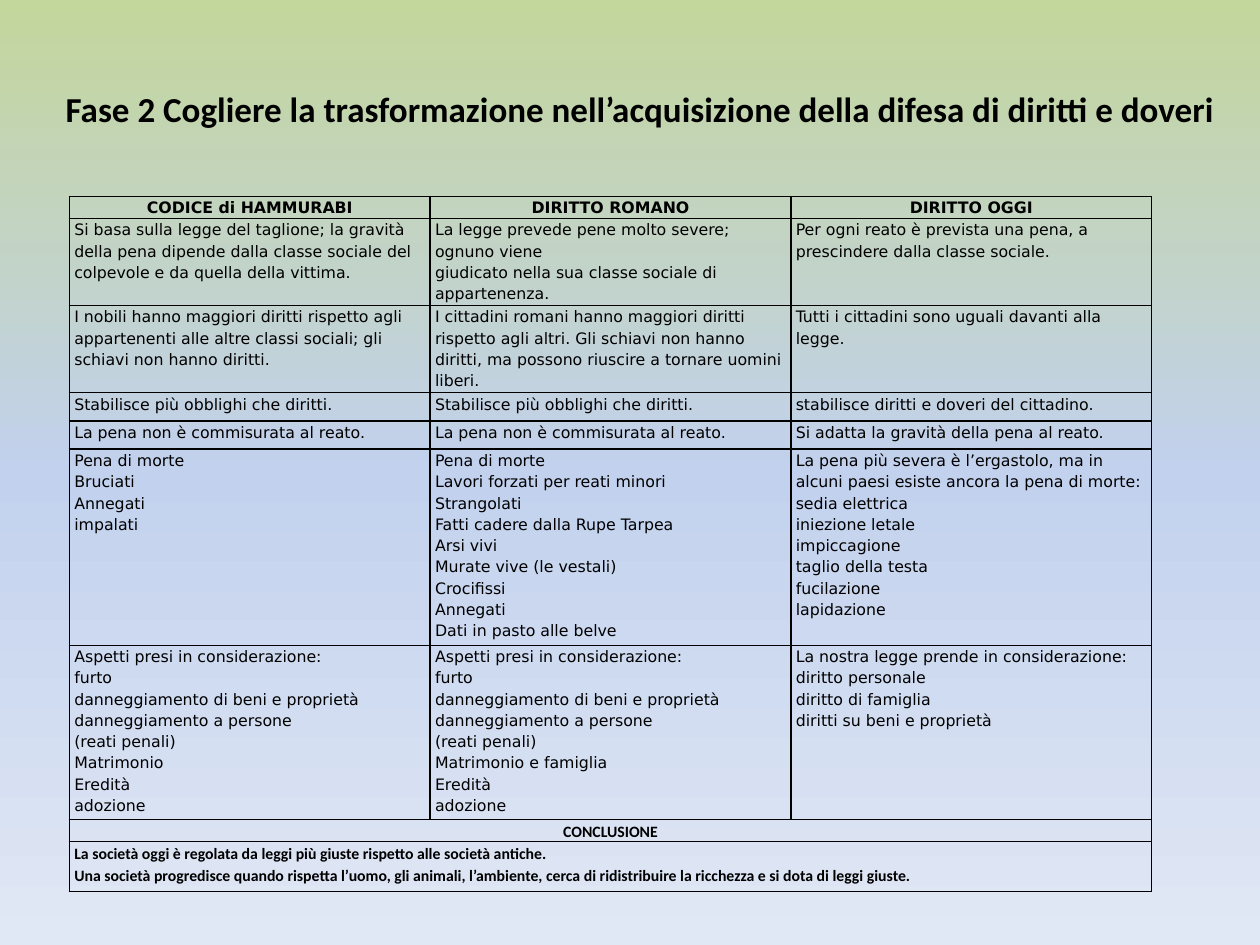
import copy
from dataclasses import dataclass

import pptx
import pptx.dml.color
import pptx.enum.dml
import pptx.enum.text
import pptx.oxml
import pptx.oxml.ns
import pptx.util

SLIDE_WIDTH = pptx.util.Inches(10)
SLIDE_HEIGHT = pptx.util.Inches(7.5)
BLACK = "000000"
GRADIENT = [(0, "C3D69B"), (0.5, "C2D1ED"), (1, "E1E8F5")]
LINE_HEIGHT = 12.15  # points taken by one line of table text
COLUMNS = 3
CENTER = pptx.enum.text.PP_ALIGN.CENTER
LEFT = pptx.enum.text.PP_ALIGN.LEFT


@dataclass
class TextStyle:
    font: str
    size: float
    bold: bool = False
    alignment: pptx.enum.text.PP_ALIGN = LEFT
    line_spacing: float = 1.15


@dataclass
class Row:
    lines: float  # height in lines of text
    cells: list[str]  # a single cell spans all columns
    style: TextStyle


TITLE = TextStyle("Calibri", 20, True, CENTER, 1)
HEADER = TextStyle("DejaVu Sans", 9, True, CENTER)
BODY = TextStyle("DejaVu Sans", 9)
CONCLUSION_HEADER = TextStyle("Calibri", 9, True, CENTER)
CONCLUSION = TextStyle("Calibri", 9, True)


def considered_aspects(family: str) -> str:
    return (
        "Aspetti presi in considerazione:\nfurto\ndanneggiamento di beni e proprietà\n"
        f"danneggiamento a persone\n(reati penali)\n{family}\nEredità\nadozione"
    )


ROWS = [
    Row(1, ["CODICE di HAMMURABI", "DIRITTO ROMANO", "DIRITTO OGGI"], HEADER),
    Row(4, [
        "Si basa sulla legge del taglione; la gravità della pena dipende dalla classe "
        "sociale del colpevole e da quella della vittima.",
        "La legge prevede pene molto severe; ognuno viene\n"
        "giudicato nella sua classe sociale di appartenenza.",
        "Per ogni reato è prevista una pena, a prescindere dalla classe sociale.",
    ], BODY),
    Row(4, [
        "I nobili hanno maggiori diritti rispetto agli appartenenti alle altre classi "
        "sociali; gli schiavi non hanno diritti.",
        "I cittadini romani hanno maggiori diritti rispetto agli altri. Gli schiavi non "
        "hanno diritti, ma possono riuscire a tornare uomini liberi.",
        "Tutti i cittadini sono uguali davanti alla legge.",
    ], BODY),
    Row(1.33, ["Stabilisce più obblighi che diritti."] * 2
        + ["stabilisce diritti e doveri del cittadino."], BODY),
    Row(1.33, ["La pena non è commisurata al reato."] * 2
        + ["Si adatta la gravità della pena al reato."], BODY),
    Row(9, [
        "Pena di morte\nBruciati\nAnnegati\nimpalati",
        "Pena di morte\nLavori forzati per reati minori\nStrangolati\n"
        "Fatti cadere dalla Rupe Tarpea\nArsi vivi\nMurate vive (le vestali)\n"
        "Crocifissi\nAnnegati\nDati in pasto alle belve",
        "La pena più severa è l’ergastolo, ma in alcuni paesi esiste ancora la pena di "
        "morte:\nsedia elettrica\niniezione letale\nimpiccagione\ntaglio della testa\n"
        "fucilazione\nlapidazione",
    ], BODY),
    Row(8, [
        considered_aspects("Matrimonio"),
        considered_aspects("Matrimonio e famiglia"),
        "La nostra legge prende in considerazione:\ndiritto personale\n"
        "diritto di famiglia\ndiritti su beni e proprietà",
    ], BODY),
    Row(1, ["CONCLUSIONE"], CONCLUSION_HEADER),
    Row(2.35, [
        "La società oggi è regolata da leggi più giuste rispetto alle società antiche.\n"
        "Una società progredisce quando rispetta l’uomo, gli animali, l’ambiente, cerca "
        "di ridistribuire la ricchezza e si dota di leggi giuste.",
    ], CONCLUSION),
]


def color(value: str) -> pptx.dml.color.RGBColor:
    return pptx.dml.color.RGBColor.from_string(value)


def set_attributes(target, values: dict) -> None:
    for name, value in values.items():
        setattr(target, name, value)


def write_text(text_frame, text: str, style: TextStyle) -> None:
    text_frame.text = text
    for paragraph in text_frame.paragraphs:
        set_attributes(paragraph, {
            "alignment": style.alignment, "line_spacing": style.line_spacing,
        })
        for run in paragraph.runs:
            set_attributes(run.font, {
                "name": style.font, "size": pptx.util.Pt(style.size), "bold": style.bold,
            })
            run.font.color.rgb = color(BLACK)


def paint_background(slide) -> None:
    fill = slide.background.fill
    fill.gradient()
    fill.gradient_angle = 270
    stop_list = slide.element.find(".//" + pptx.oxml.ns.qn("a:gsLst"))
    stop_list.append(copy.deepcopy(stop_list[0]))
    for stop, (position, value) in zip(fill.gradient_stops, GRADIENT):
        stop.position = position
        stop.color.rgb = color(value)


def add_title(slide, text: str) -> None:
    shape = slide.shapes.add_textbox(
        int(0.023 * SLIDE_WIDTH), int(0.03 * SLIDE_HEIGHT),
        int(0.97 * SLIDE_WIDTH), int(0.17 * SLIDE_HEIGHT),
    )
    set_attributes(shape.text_frame, {
        "word_wrap": True, "vertical_anchor": pptx.enum.text.MSO_ANCHOR.MIDDLE,
    })
    write_text(shape.text_frame, text, TITLE)


def format_cell(cell) -> None:
    set_attributes(cell, {
        "margin_left": pptx.util.Inches(0.04), "margin_right": pptx.util.Inches(0.04),
        "margin_top": 0, "margin_bottom": 0,
    })
    cell.fill.background()
    properties = cell._tc.get_or_add_tcPr()
    for index, side in enumerate(("lnL", "lnR", "lnT", "lnB")):
        properties.insert(index, pptx.oxml.parse_xml(
            f'<a:{side} {pptx.oxml.ns.nsdecls("a")} w="{pptx.util.Pt(1)}"><a:solidFill>'
            f'<a:srgbClr val="{BLACK}"/></a:solidFill></a:{side}>'
        ))


def add_comparison_table(slide, rows: list[Row]) -> None:
    heights = [pptx.util.Pt(row.lines * LINE_HEIGHT) for row in rows]
    table = slide.shapes.add_table(
        len(rows), COLUMNS, int(0.055 * SLIDE_WIDTH), int(0.208 * SLIDE_HEIGHT),
        int(0.859 * SLIDE_WIDTH), sum(heights),
    ).table
    set_attributes(table, {"first_row": False, "horz_banding": False})
    for index, (row, height) in enumerate(zip(rows, heights)):
        table.rows[index].height = height
        for cell in table.rows[index].cells:
            format_cell(cell)
        if len(row.cells) == 1:
            table.cell(index, 0).merge(table.cell(index, COLUMNS - 1))
        for column, text in enumerate(row.cells):
            write_text(table.cell(index, column).text_frame, text, row.style)


def main() -> None:
    presentation = pptx.Presentation()
    set_attributes(presentation, {
        "slide_width": SLIDE_WIDTH, "slide_height": SLIDE_HEIGHT,
    })
    slide = presentation.slides.add_slide(presentation.slide_layouts[6])
    # Background and heading
    paint_background(slide)
    add_title(slide, "Fase 2 Cogliere la trasformazione nell’acquisizione "
                     "della difesa di diritti e doveri")
    # Comparison of the three legal systems, with the conclusion
    add_comparison_table(slide, ROWS)
    presentation.save("out.pptx")


if __name__ == "__main__":
    main()
